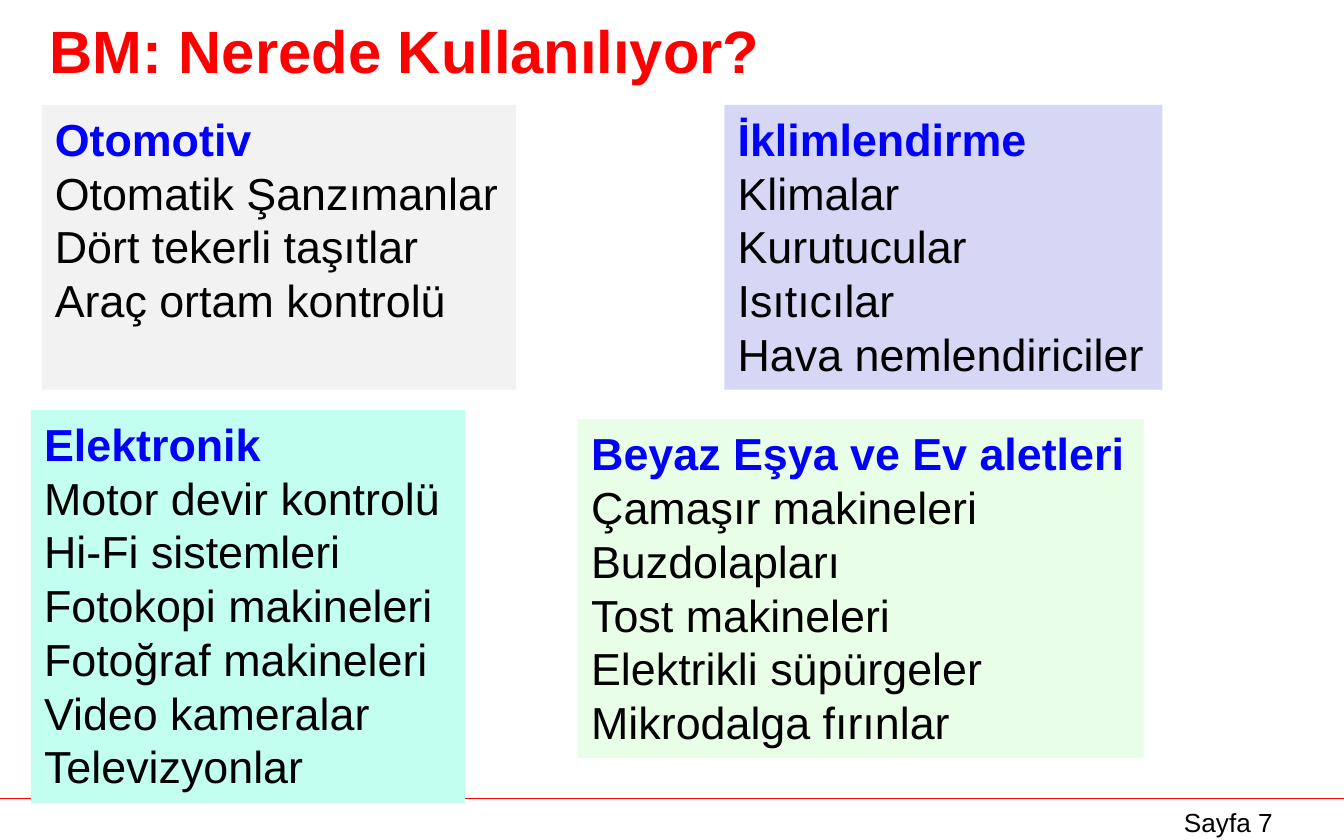
from dataclasses import dataclass

from lxml import etree
from pptx import Presentation
from pptx.dml.color import RGBColor
from pptx.enum.shapes import MSO_CONNECTOR, MSO_SHAPE
from pptx.enum.text import MSO_ANCHOR, PP_ALIGN
from pptx.oxml.ns import qn
from pptx.slide import Slide
from pptx.text.text import TextFrame
from pptx.util import Emu, Pt

RECTANGLE = MSO_SHAPE.RECTANGLE
STRAIGHT = MSO_CONNECTOR.STRAIGHT
TOP, MIDDLE = MSO_ANCHOR.TOP, MSO_ANCHOR.MIDDLE
LEFT, CENTER = PP_ALIGN.LEFT, PP_ALIGN.CENTER

EMU_PER_PX = 9144
SLIDE_WIDTH, SLIDE_HEIGHT = 1000, 625
FOOTER_RULE_Y = 594
UPPER_ROW_Y, UPPER_ROW_HEIGHT = 78, 212


@dataclass(frozen=True)
class Theme:
    font: str = "Arial"
    accent: str = "FF0000"
    heading: str = "0000FF"
    body: str = "000000"
    title_size: int = 32
    panel_size: int = 24
    footer_size: int = 14
    rule_width: float = 0.75
    automotive: str = "F2F2F2"
    electronics: str = "C2FFF0"
    appliances: str = "E9FEE6"
    climate: str = "D6D6F5"


THEME = Theme()


@dataclass(frozen=True)
class Box:
    left: int
    top: int
    width: int
    height: int

    def emu(self) -> tuple[Emu, ...]:
        return tuple(px(n) for n in (self.left, self.top, self.width, self.height))


@dataclass(frozen=True)
class Panel:
    box: Box
    fill: str
    heading: str
    uses: tuple[str, ...]


PANELS = (
    Panel(Box(31, UPPER_ROW_Y, 353, UPPER_ROW_HEIGHT), THEME.automotive, "Otomotiv",
          ("Otomatik Şanzımanlar", "Dört tekerli taşıtlar", "Araç ortam kontrolü")),
    Panel(Box(23, 305, 323, 293), THEME.electronics, "Elektronik",
          ("Motor devir kontrolü", "Hi-Fi sistemleri", "Fotokopi makineleri",
           "Fotoğraf makineleri", "Video kameralar", "Televizyonlar")),
    Panel(Box(430, 312, 421, 252), THEME.appliances, "Beyaz Eşya ve Ev aletleri",
          ("Çamaşır makineleri", "Buzdolapları", "Tost makineleri",
           "Elektrikli süpürgeler", "Mikrodalga fırınlar")),
    Panel(Box(539, UPPER_ROW_Y, 326, UPPER_ROW_HEIGHT), THEME.climate, "İklimlendirme",
          ("Klimalar", "Kurutucular", "Isıtıcılar", "Hava nemlendiriciler")),
)


def px(length: int) -> Emu:
    return Emu(length * EMU_PER_PX)


def write(frame: TextFrame, text: str, size: int, first_color: str,
          first_bold: bool, align: PP_ALIGN = LEFT, anchor: MSO_ANCHOR = TOP) -> None:
    frame.text = text
    frame.word_wrap = True
    frame.vertical_anchor = anchor
    for index, paragraph in enumerate(frame.paragraphs):
        paragraph.alignment = align
        for run in paragraph.runs:
            run.font.name = THEME.font
            run.font.size = Pt(size)
            run.font.bold = first_bold and index == 0
            color = first_color if index == 0 else THEME.body
            run.font.color.rgb = RGBColor.from_string(color)


def draw_footer_rule(slide: Slide) -> None:
    rule = slide.shapes.add_connector(
        STRAIGHT, px(0), px(FOOTER_RULE_Y), px(SLIDE_WIDTH), px(FOOTER_RULE_Y))
    rule.line.color.rgb = RGBColor.from_string(THEME.accent)
    rule.line.width = Pt(THEME.rule_width)
    etree.SubElement(rule._element.spPr, qn("a:effectLst"))


def draw_panel(slide: Slide, panel: Panel) -> None:
    area = slide.shapes.add_shape(RECTANGLE, *panel.box.emu())
    area.shadow.inherit = False
    area.fill.solid()
    area.fill.fore_color.rgb = RGBColor.from_string(panel.fill)
    area.line.fill.background()
    write(area.text_frame, "\n".join((panel.heading, *panel.uses)),
          THEME.panel_size, THEME.heading, True)


def main() -> None:
    deck = Presentation()
    deck.slide_width, deck.slide_height = px(SLIDE_WIDTH), px(SLIDE_HEIGHT)
    slide = deck.slides.add_slide(deck.slide_layouts[6])

    draw_footer_rule(slide)
    page = slide.shapes.add_textbox(*Box(839, 595, 150, 26).emu())
    write(page.text_frame, "Sayfa 7", THEME.footer_size, THEME.body, False, CENTER)
    title = slide.shapes.add_textbox(*Box(27, 4, 921, 66).emu())
    write(title.text_frame, "BM: Nerede Kullanılıyor?", THEME.title_size,
          THEME.accent, True, anchor=MIDDLE)
    for panel in PANELS:
        draw_panel(slide, panel)

    deck.save("out.pptx")


if __name__ == "__main__":
    main()
